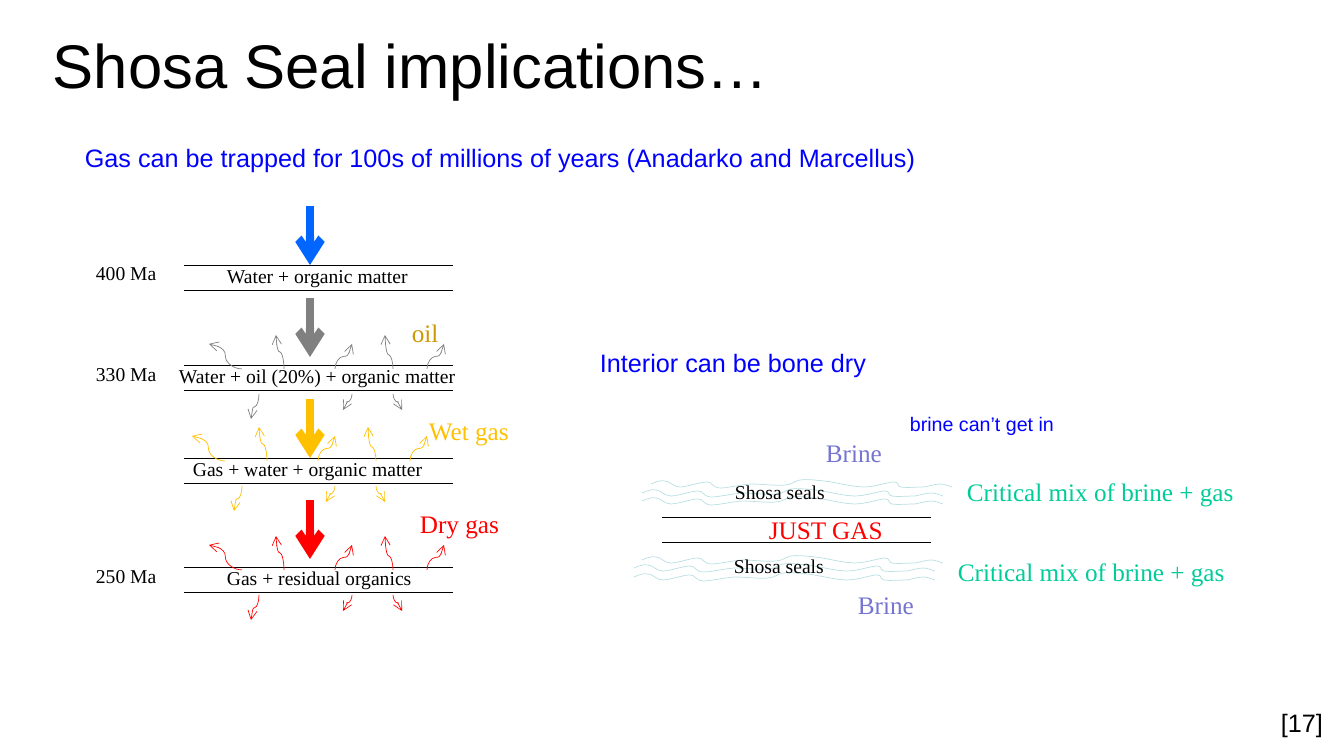
from lxml.etree import SubElement
from pptx import Presentation
from pptx.dml.color import RGBColor
from pptx.enum.shapes import MSO_CONNECTOR
from pptx.enum.text import MSO_ANCHOR, MSO_AUTO_SIZE, PP_ALIGN
from pptx.oxml.ns import qn
from pptx.util import Pt

PX = 914400 / 100.8
SLIDE_SIZE = (1344, 756)
SANS, SERIF = "Arial", "Times New Roman"
COLORS = {
    "black": "000000", "note": "0000FF", "water": "0066FF", "oil": "808080",
    "oil label": "CC9900", "wet gas": "FFC000", "dry gas": "FF0000",
    "wave": "BBE0E3", "brine": "7575D1", "mix": "00CC99",
}

# text, left, top, width, height, size, font, color
TITLE = ("Shosa Seal implications…", 43, 25, 1210, 77, 44, SANS, "black")
HISTORY_TEXTS = [
    ("Water + organic matter", 217, 259, 203, 34, 14, SERIF, "black"),
    ("Water + oil (20%) + organic matter", 169, 359, 298, 34, 14, SERIF, "black"),
    ("Gas + water + organic matter", 183, 452, 252, 34, 14, SERIF, "black"),
    ("Gas + residual organics", 217, 561, 207, 34, 14, SERIF, "black"),
    ("oil", 402, 312, 47, 40, 18, SERIF, "oil label"),
    ("Wet gas", 419, 410, 101, 40, 18, SERIF, "wet gas"),
    ("Dry gas", 410, 503, 100, 40, 18, SERIF, "dry gas"),
    ("400 Ma", 86, 256, 82, 34, 14, SERIF, "black"),
    ("330 Ma", 86, 357, 82, 34, 14, SERIF, "black"),
    ("250 Ma", 86, 559, 82, 34, 14, SERIF, "black"),
]
SEAL_TEXTS = [
    ("Shosa seals", 725, 475, 111, 34, 14, SERIF, "black"),
    ("Shosa seals", 724, 549, 111, 34, 14, SERIF, "black"),
    ("Brine", 816, 432, 76, 40, 18, SERIF, "brine"),
    ("Brine", 848, 584, 76, 40, 18, SERIF, "brine"),
    ("Critical mix of brine + gas", 957, 471, 290, 40, 18, SERIF, "mix"),
    ("Critical mix of brine + gas", 948, 551, 290, 40, 18, SERIF, "mix"),
    ("JUST GAS", 759, 509, 135, 40, 18, SERIF, "dry gas"),
]
NOTES = [
    ("Gas can be trapped for 100s of millions of years (Anadarko and Marcellus)",
     75, 137, 859, 40, 18, SANS, "note"),
    ("Interior can be bone dry", 590, 342, 288, 40, 18, SANS, "note"),
    ("brine can’t get in", 900, 407, 165, 34, 14, SANS, "note"),
    ("[17]", 1271, 702, 62, 40, 18, SANS, "black"),
]

# left and top of each layer, drawn as two parallel lines
HISTORY_LAYERS = [(184, 265), (184, 365), (184, 458), (184, 567)]
GAS_LAYER = (662, 517)
LAYER_WIDTH, LAYER_HEIGHT = 269, 25

BURIAL_X, BURIAL_LENGTH = 310, 59
BURIAL_ARROWS = [(206, "water"), (298, "oil"), (399, "wet gas"), (500, "dry gas")]

# left shift, top of the layer, color
EXPULSIONS = [(0, 366, "oil"), (-17, 458, "wet gas"), (0, 567, "dry gas")]
SIDE_ESCAPE = (242, 3, 209, -22)
# start x, start y, end x, end y (y from the top of the layer), bend in percent
ESCAPES = [
    (284, 3, 276, -31, 50), (335, 3, 352, -22, 50), (393, 3, 385, -31, 41),
    (427, 3, 444, -22, 50), (352, 28, 343, 44, 50), (259, 28, 251, 53, 50),
    (393, 28, 402, 44, 50),
]

WAVES = [(642, 496), (642, 488), (651, 479), (634, 572), (634, 563), (642, 555)]
WAVE_START = (0, 5)
# two control points and the end of each cubic curve
WAVE_CURVES = [
    ((5, 3), (9, 1), (14, 2)), ((19, 2), (22, 8), (29, 8)),
    ((36, 8), (49, 3), (56, 3)), ((62, 3), (60, 8), (69, 9)),
    ((76, 9), (89, 6), (100, 5)), ((111, 5), (126, 7), (134, 6)),
    ((143, 5), (143, 2), (149, 1)), ((156, 0), (163, 1), (173, 2)),
    ((184, 3), (201, 8), (213, 8)), ((224, 8), (237, 3), (243, 3)),
    ((249, 3), (245, 7), (250, 8)), ((255, 9), (266, 8), (273, 8)),
    ((279, 7), (284, 5), (289, 5)), ((294, 5), (297, 7), (301, 8)),
]


def emu(pixels):
    return round(pixels * PX)


def color(name):
    return RGBColor.from_string(COLORS[name])


def add_text(shapes, text, left, top, width, height, size, font, color_name):
    shape = shapes.add_textbox(*map(emu, (left, top, width, height)))
    frame = shape.text_frame
    frame.word_wrap = False
    frame.auto_size = MSO_AUTO_SIZE.SHAPE_TO_FIT_TEXT
    paragraph = frame.paragraphs[0]
    paragraph.alignment = PP_ALIGN.LEFT
    run = paragraph.add_run()
    run.text = text
    run.font.size = Pt(size)
    run.font.name = font
    run.font.color.rgb = color(color_name)
    return shape


def add_line(shapes, start, end, color_name, width=0.5, arrow=False,
             kind=MSO_CONNECTOR.STRAIGHT):
    line = shapes.add_connector(kind, *map(emu, (*start, *end)))
    line.line.color.rgb = color(color_name)
    line.line.width = Pt(width)
    if arrow:
        outline = line._element.spPr.find(qn("a:ln"))
        SubElement(outline, qn("a:tailEnd"), type="arrow")
    SubElement(line._element.spPr, qn("a:effectLst"))
    return line


def add_layer(shapes, left, top):
    for y in (top, top + LAYER_HEIGHT):
        add_line(shapes, (left, y), (left + LAYER_WIDTH, y), "black")


def add_upright_curve(shapes, start, end, bend, color_name):
    """Add a curved arrow that leaves and arrives vertically."""
    line = add_line(shapes, start, end, color_name, arrow=True, kind=MSO_CONNECTOR.CURVE)
    (start_x, start_y), (end_x, end_y) = start, end
    width, height = abs(end_y - start_y), abs(end_x - start_x)
    line.left = emu((start_x + end_x - width) / 2)
    line.top = emu((start_y + end_y - height) / 2)
    line.width, line.height = emu(width), emu(height)
    rightward, upward = end_x > start_x, end_y < start_y
    transform = line._element.spPr.find(qn("a:xfrm"))
    transform.set("rot", str((90 if rightward == upward else 270) * 60000))
    transform.set("flipH", str(int(rightward)))
    transform.set("flipV", str(int(upward)))
    guides = line._element.spPr.find(qn("a:prstGeom")).find(qn("a:avLst"))
    SubElement(guides, qn("a:gd"), name="adj1", fmla=f"val {bend * 1000}")


def add_wave(shapes, left, top):
    points = [WAVE_START] + [point for curve in WAVE_CURVES for point in curve]
    points = [(emu(left + x), emu(top + y)) for x, y in points]
    builder = shapes.build_freeform(*points[0])
    builder.add_line_segments(points[1:], close=False)
    wave = builder.convert_to_shape()
    segments = list(wave._element.iter(qn("a:lnTo")))
    outline = segments[0].getparent()
    for first in range(0, len(segments), 3):
        curve = SubElement(outline, qn("a:cubicBezTo"))
        for segment in segments[first:first + 3]:
            curve.append(segment[0])
            outline.remove(segment)
    wave.shadow.inherit = False
    wave.fill.background()
    wave.line.color.rgb = color("wave")
    wave.line.width = Pt(0.5)


def add_history(shapes):
    """Draw the layers through time with what enters and leaves them."""
    for layer in HISTORY_LAYERS:
        add_layer(shapes, *layer)
    for top, color_name in BURIAL_ARROWS:
        add_line(shapes, (BURIAL_X, top), (BURIAL_X, top + BURIAL_LENGTH),
                 color_name, width=6, arrow=True)
    for shift, top, color_name in EXPULSIONS:
        x1, y1, x2, y2 = SIDE_ESCAPE
        add_line(shapes, (x1 + shift, y1 + top), (x2 + shift, y2 + top),
                 color_name, arrow=True, kind=MSO_CONNECTOR.CURVE)
        for x1, y1, x2, y2, bend in ESCAPES:
            add_upright_curve(shapes, (x1 + shift, y1 + top), (x2 + shift, y2 + top),
                              bend, color_name)
    for text in HISTORY_TEXTS:
        add_text(shapes, *text)


def add_seals(shapes):
    """Draw the gas layer between its two seals."""
    add_layer(shapes, *GAS_LAYER)
    for wave in WAVES:
        add_wave(shapes, *wave)
    for text in SEAL_TEXTS:
        add_text(shapes, *text)


def main():
    presentation = Presentation()
    presentation.slide_width, presentation.slide_height = map(emu, SLIDE_SIZE)
    slide = presentation.slides.add_slide(presentation.slide_layouts[6])
    title = add_text(slide.shapes, *TITLE)
    title.text_frame.auto_size = MSO_AUTO_SIZE.NONE
    title.text_frame.word_wrap = True
    title.text_frame.vertical_anchor = MSO_ANCHOR.MIDDLE
    add_history(slide.shapes.add_group_shape().shapes)
    add_seals(slide.shapes.add_group_shape().shapes)
    for note in NOTES:
        add_text(slide.shapes, *note)
    presentation.save("out.pptx")


if __name__ == "__main__":
    main()
